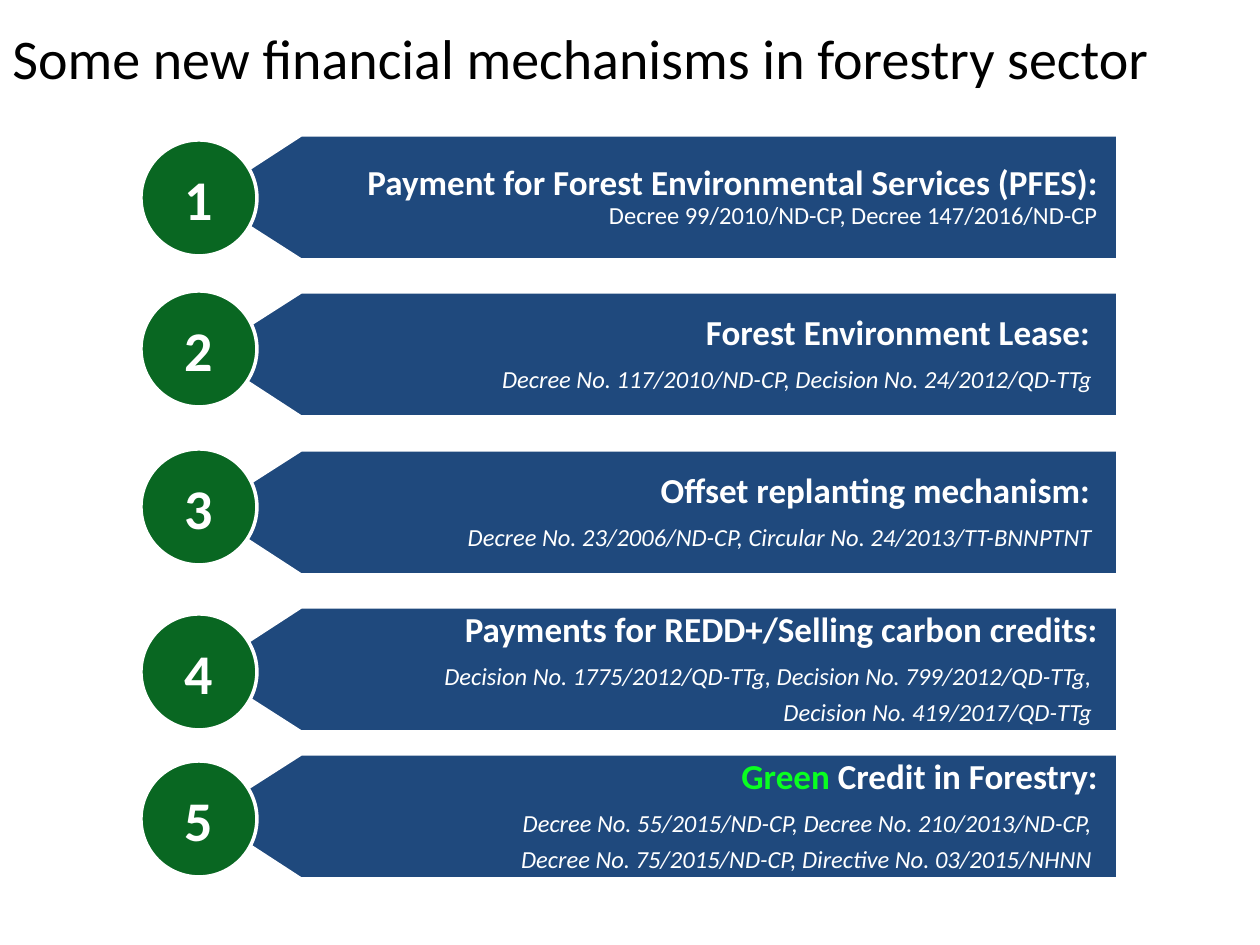
from dataclasses import dataclass

from pptx import Presentation
from pptx.dml.color import RGBColor
from pptx.enum.shapes import MSO_SHAPE
from pptx.enum.text import MSO_ANCHOR, PP_ALIGN
from pptx.util import Pt

PX = 914400 / 126


@dataclass(frozen=True)
class Theme:
    font: str = "Calibri"
    black: str = "000000"
    white: str = "FFFFFF"
    navy: str = "1F497D"
    forest: str = "096722"
    lime: str = "09FF20"
    large: int = 32
    heading: int = 20
    decree: int = 14
    outline: int = 2


theme = Theme()


def px(length):
    return round(length * PX)


def write(paragraph, text, size=theme.heading, color=theme.white, bold=False,
          italic=False, align=PP_ALIGN.LEFT, spacing=None, after=0):
    paragraph.alignment = align
    paragraph.line_spacing = spacing
    paragraph.space_after = Pt(after)
    run = paragraph.add_run()
    run.text = text
    run.font.name = theme.font
    run.font.size = Pt(size)
    run.font.bold = bold
    run.font.italic = italic
    run.font.color.rgb = RGBColor.from_string(color)


def paint(shape, color):
    shape.shadow.inherit = False
    shape.fill.solid()
    shape.fill.fore_color.rgb = RGBColor.from_string(color)
    shape.line.color.rgb = RGBColor.from_string(theme.white)
    shape.line.width = Pt(theme.outline)
    shape.text_frame.word_wrap = True
    shape.text_frame.vertical_anchor = MSO_ANCHOR.MIDDLE


deck = Presentation()
deck.slide_width, deck.slide_height = px(1260), px(945)
slide = deck.slides.add_slide(deck.slide_layouts[6])

title = slide.shapes.add_textbox(0, px(-44), px(1260), px(203)).text_frame
title.word_wrap = True
title.vertical_anchor = MSO_ANCHOR.MIDDLE
write(title.paragraphs[0], "Some new financial mechanisms in forestry sector",
      size=theme.large, color=theme.black)

heading = dict(size=theme.heading, bold=True, align=PP_ALIGN.RIGHT, spacing=0.9, after=8.5)
accent = dict(heading, color=theme.lime)
decree = dict(size=theme.decree, italic=True, align=PP_ALIGN.RIGHT, spacing=0.9, after=5.5)
upright = dict(decree, italic=False)

mechanisms = [
    (135, 140, [[("Payment for Forest Environmental Services (PFES): ", heading),
                 ("Decree 99/2010/ND-CP, Decree 147/2016/ND-CP", upright)]]),
    (292, 291, [[("Forest Environment Lease: ", heading)],
                [("Decree No. 117/2010/ND-CP, Decision No. 24/2012/QD-TTg ", decree)]]),
    (450, 449, [[("Offset replanting mechanism: ", heading)],
                [("Decree No. 23/2006/ND-CP, Circular No. 24/2013/TT-BNNPTNT ", decree)]]),
    (607, 614, [[("Payments for REDD+/Selling carbon credits:", heading)],
                [("Decision No. 1775/2012/QD-TTg, Decision No. 799/2012/QD-TTg, ", decree)],
                [("Decision No. 419/2017/QD-TTg ", decree)]]),
    (754, 761, [[("Green ", accent), ("Credit in Forestry:", heading)],
                [("Decree No. 55/2015/ND-CP, Decree No. 210/2013/ND-CP, ", decree)],
                [("Decree No. 75/2015/ND-CP, Directive No. 03/2015/NHNN ", decree)]]),
]
tip, shoulder, right, height = 204, 301, 1118, 125
badge_left, badge_size = 141, 116

for number, (top, badge_top, lines) in enumerate(mechanisms, 1):
    outline = slide.shapes.build_freeform(right, top + height, scale=PX)
    outline.add_line_segments([(shoulder, top + height), (tip, top + height / 2),
                               (shoulder, top), (right, top)], close=True)
    banner = outline.convert_to_shape()
    paint(banner, theme.navy)
    wording = banner.text_frame
    wording.margin_left, wording.margin_right = px(95), px(20)
    wording.margin_top = wording.margin_bottom = px(10)
    for index, line in enumerate(lines):
        paragraph = wording.add_paragraph() if index else wording.paragraphs[0]
        for text, style in line:
            write(paragraph, text, **style)

    badge = slide.shapes.add_shape(MSO_SHAPE.OVAL, px(badge_left), px(badge_top),
                                   px(badge_size), px(badge_size))
    paint(badge, theme.forest)
    write(badge.text_frame.paragraphs[0], str(number), size=theme.large,
          bold=True, align=PP_ALIGN.CENTER)

deck.save("out.pptx")
